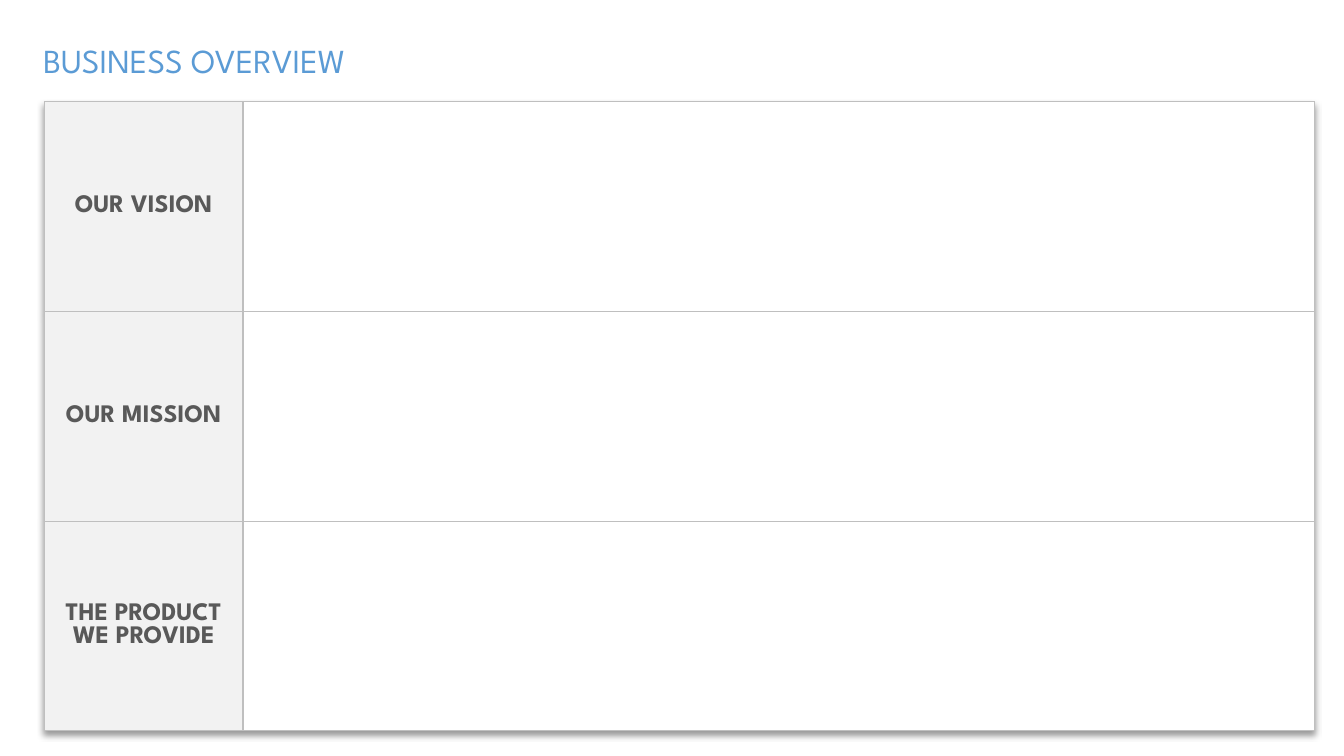
"""Build the business overview slide."""
import pptx
import pptx.dml.color
import pptx.enum.text
import pptx.oxml
import pptx.oxml.ns
import pptx.util
from pptx.util import Inches

TITLE = "BUSINESS OVERVIEW"
LABELS = ["OUR VISION", "OUR MISSION", "THE PRODUCT WE PROVIDE"]
FONT = "League Spartan"
BLUE, GRAY, BORDER = "5B9BD5", "595959", "BFBFBF"
FILLS = ["F2F2F2", "FFFFFF"]
COL_WIDTHS = [1.97, 10.63]
ROW_HEIGHT = 2.08
NS = pptx.oxml.ns.nsdecls("a")


def rgb(value):
    return pptx.dml.color.RGBColor.from_string(value)


def write(tf, text, size, color, align, bold=False):
    tf.text = text
    p = tf.paragraphs[0]
    p.alignment = align
    font = p.runs[0].font
    font.name, font.size, font.bold = FONT, pptx.util.Pt(size), bold
    font.color.rgb = rgb(color)


def set_borders(cell):
    tc_pr = cell._tc.get_or_add_tcPr()
    for i, side in enumerate(["lnL", "lnR", "lnT", "lnB"]):
        tc_pr.insert(i, pptx.oxml.parse_xml(
            f'<a:{side} {NS} w="12700"><a:solidFill><a:srgbClr val="{BORDER}"/>'
            f'</a:solidFill></a:{side}>'))


def add_title(s):
    title = s.shapes.title
    title.left, title.top = Inches(0.33), Inches(0.35)
    title.width, title.height = Inches(8.08), Inches(0.5)
    tf = title.text_frame
    tf.word_wrap = True
    tf.auto_size = pptx.enum.text.MSO_AUTO_SIZE.NONE
    tf.vertical_anchor = pptx.enum.text.MSO_ANCHOR.BOTTOM
    write(tf, TITLE, 24, BLUE, pptx.enum.text.PP_ALIGN.LEFT)


def add_overview(s):
    frame = s.shapes.add_table(
        len(LABELS), len(COL_WIDTHS), Inches(0.44), Inches(1.01),
        Inches(sum(COL_WIDTHS)), Inches(ROW_HEIGHT * len(LABELS)))
    table = frame.table
    table.first_row = table.horz_banding = False
    table._tbl.tblPr.insert(0, pptx.oxml.parse_xml(
        f'<a:effectLst {NS}><a:outerShdw blurRad="50800" dist="38100" dir="5400000" '
        'algn="t" rotWithShape="0"><a:srgbClr val="000000"><a:alpha val="40000"/>'
        '</a:srgbClr></a:outerShdw></a:effectLst>'))
    for col, width in zip(table.columns, COL_WIDTHS):
        col.width = Inches(width)
    for row, label in zip(table.rows, LABELS):
        row.height = Inches(ROW_HEIGHT)
        for cell, fill in zip(row.cells, FILLS):
            cell.fill.solid()
            cell.fill.fore_color.rgb = rgb(fill)
            cell.vertical_anchor = pptx.enum.text.MSO_ANCHOR.MIDDLE
            set_borders(cell)
        write(row.cells[0].text_frame, label, 18, GRAY,
              pptx.enum.text.PP_ALIGN.CENTER, bold=True)


def main():
    prs = pptx.Presentation()
    prs.slide_width, prs.slide_height = Inches(13.33), Inches(7.5)
    s = prs.slides.add_slide(prs.slide_layouts[5])
    add_title(s)
    add_overview(s)
    prs.save("out.pptx")


if __name__ == "__main__":
    main()
